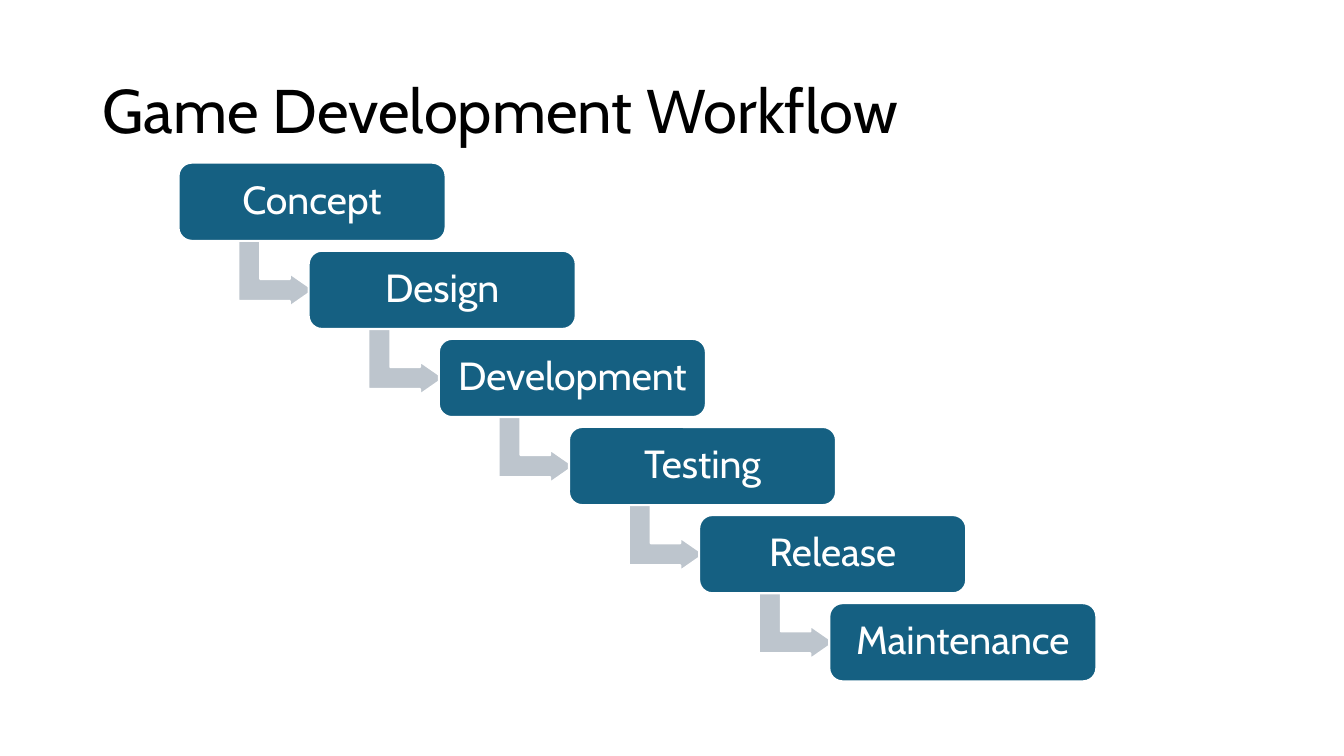
from pptx import Presentation
from pptx.dml.color import RGBColor
from pptx.enum.shapes import MSO_SHAPE
from pptx.enum.text import MSO_ANCHOR, MSO_AUTO_SIZE, PP_ALIGN
from pptx.util import Cm, Pt

STEPS = ["Concept", "Design", "Development", "Testing", "Release", "Maintenance"]
LEFT, TOP = 4.5, 4.1
RIGHT, DOWN = 3.28, 2.22


def color(code):
    return RGBColor.from_string(code)


def adjust(item, values):
    """Set each named attribute of item."""
    for name, value in values.items():
        setattr(item, name, value)


class Deck:
    font = "Cabin"
    white, black, blue, gray = "FFFFFF", "000000", "156082", "BDC5CD"

    def __init__(self):
        self.show = Presentation()
        adjust(self.show, {"slide_width": Cm(33.87), "slide_height": Cm(19.05)})
        self.slide = self.show.slides.add_slide(self.show.slide_layouts[5])
        self.flow = self.slide.shapes.add_group_shape()

    def label(self, shape, text, size, ink, align, inset):
        frame = shape.text_frame
        frame.text = text
        adjust(frame, {
            "word_wrap": True,
            "auto_size": MSO_AUTO_SIZE.NONE,
            "vertical_anchor": MSO_ANCHOR.MIDDLE,
            "margin_left": Cm(inset),
            "margin_right": Cm(inset),
        })
        line = frame.paragraphs[0]
        adjust(line, {"alignment": align, "line_spacing": 0.9})
        adjust(line.font, {"name": self.font, "size": Pt(size)})
        line.font.color.rgb = color(ink)

    def title(self, text):
        title = self.slide.shapes.title
        adjust(title, {"left": Cm(2.33), "top": Cm(1.01),
                       "width": Cm(29.21), "height": Cm(3.68)})
        self.label(title, text, 44, self.black, PP_ALIGN.LEFT, 0.25)

    def shape(self, kind, left, top, width, height, fill, bends):
        shape = self.flow.shapes.add_shape(
            kind, Cm(left), Cm(top), Cm(width), Cm(height))
        shape.shadow.inherit = False
        shape.fill.solid()
        shape.fill.fore_color.rgb = color(fill)
        shape.line.color.rgb = color(self.white)
        shape.line.width = Pt(1.5)
        for spot, bend in enumerate(bends):
            shape.adjustments[spot] = bend
        return shape

    def arrow(self, left, top):
        arrow = self.shape(MSO_SHAPE.BENT_UP_ARROW, left, top, 1.67, 1.9,
                           self.gray, [0.33, 0.25, 0.36])
        arrow.rotation = 90

    def step(self, text, left, top):
        box = self.shape(MSO_SHAPE.ROUNDED_RECTANGLE, left, top, 6.73, 1.97,
                         self.blue, [0.17])
        self.label(box, text, 28, self.white, PP_ALIGN.CENTER, 0.3)


def main():
    deck = Deck()
    deck.title("Game Development Workflow")
    for rank, name in enumerate(STEPS):
        left, top = LEFT + rank * RIGHT, TOP + rank * DOWN
        if name != STEPS[-1]:
            deck.arrow(left + 1.62, top + 1.84)
        deck.step(name, left, top)
    deck.show.save("out.pptx")


if __name__ == "__main__":
    main()
